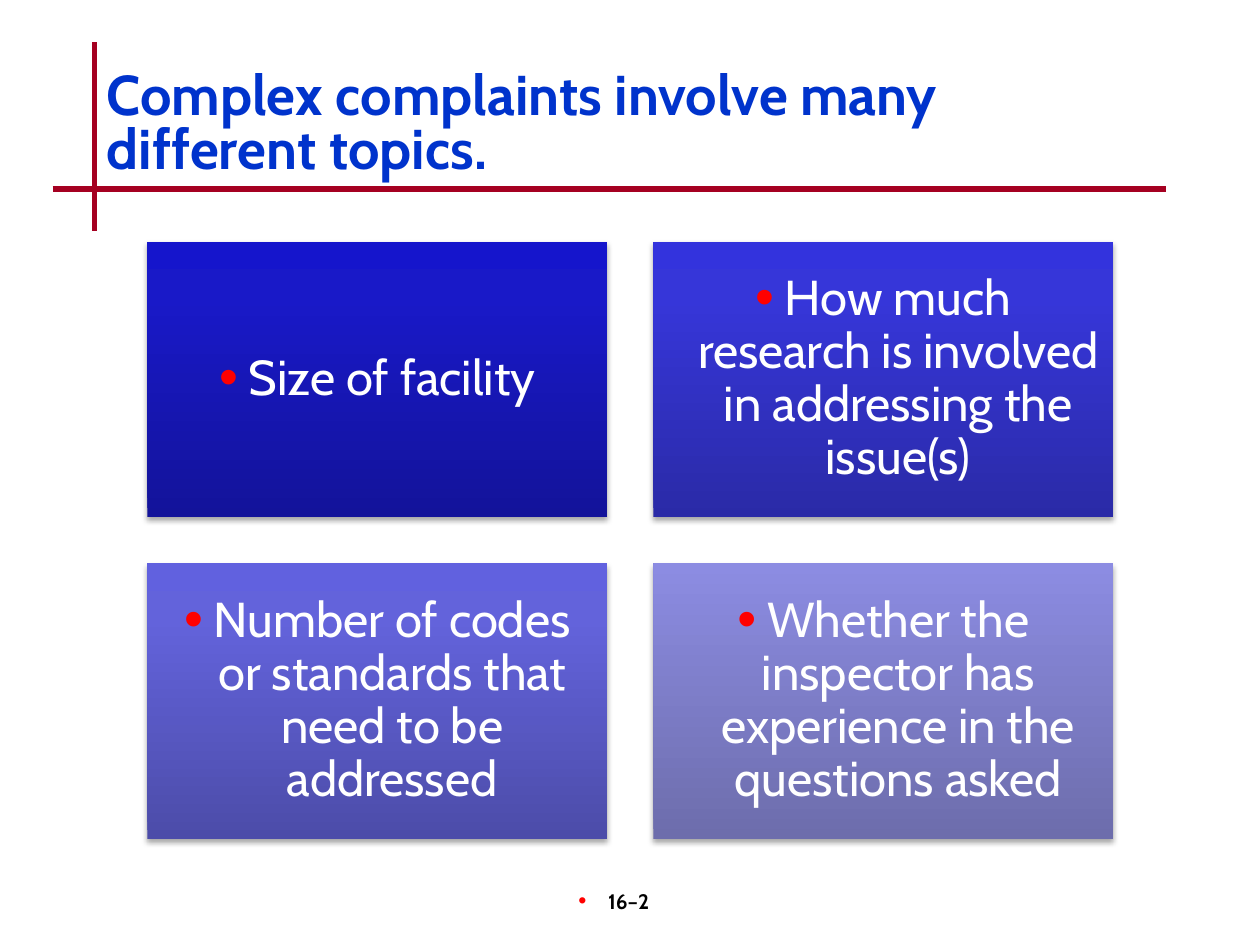
from dataclasses import dataclass

from lxml import etree
from pptx import Presentation
from pptx.dml.color import RGBColor
from pptx.enum.shapes import MSO_CONNECTOR, MSO_SHAPE
from pptx.enum.text import MSO_ANCHOR, MSO_AUTO_SIZE, PP_ALIGN
from pptx.oxml.ns import qn
from pptx.util import Cm, Pt

STRAIGHT = MSO_CONNECTOR.STRAIGHT
RECTANGLE = MSO_SHAPE.RECTANGLE
MIDDLE, TOP = MSO_ANCHOR.MIDDLE, MSO_ANCHOR.TOP
NO_AUTOFIT = MSO_AUTO_SIZE.NONE
LEFT, CENTER = PP_ALIGN.LEFT, PP_ALIGN.CENTER
TITLE_ONLY = 5


@dataclass(frozen=True)
class Theme:
    font: str = "Cabin"
    title: str = "0033CC"
    rule: str = "A50021"
    bullet: str = "FF0000"
    topic: str = "FFFFFF"
    number: str = "000000"
    shadow: str = "000000"
    title_size: int = 32
    topic_size: int = 28
    number_size: int = 12
    rule_width: int = 3


@dataclass(frozen=True)
class Topic:
    text: str
    stops: tuple[tuple[int, str], ...]


@dataclass(frozen=True)
class Rule:
    begin: tuple[float, float]
    end: tuple[float, float]


@dataclass(frozen=True)
class Grid:
    left: float = 2.97
    top: float = 4.87
    width: float = 9.27
    height: float = 5.56
    gap: float = 0.93
    columns: int = 2


THEME = Theme()
GRID = Grid()
TOPICS = (
    Topic("Size of facility",
          ((0, "13139A"), (80, "1919C8"), (100, "1515CC"))),
    Topic("How much research is involved in addressing the issue(s)",
          ((0, "2A2AA7"), (80, "3636D9"), (100, "3333DD"))),
    Topic("Number of codes or standards that need to be addressed",
          ((0, "4C4CA9"), (80, "6363DB"), (100, "6161DF"))),
    Topic("Whether the inspector has experience in the questions asked",
          ((0, "6D6DAC"), (100, "8C8CE2"))),
)
RULES = (
    Rule((1.9, 0.85), (1.9, 4.66)),
    Rule((1.06, 3.81), (23.5, 3.81)),
)


def set_values(target, values: dict) -> None:
    for name, value in values.items():
        setattr(target, name, value)


def add_element(parent, tag: str, **attributes):
    values = {name: str(value) for name, value in attributes.items()}
    return etree.SubElement(parent, qn(tag), values)


def add_bullet(para, indent: float) -> None:
    properties = para._p.get_or_add_pPr()
    properties.set("marL", str(Cm(indent)))
    properties.set("indent", str(-Cm(indent)))
    color = add_element(properties, "a:buClr")
    add_element(color, "a:srgbClr", val=THEME.bullet)
    add_element(properties, "a:buSzPct", val=110000)
    add_element(properties, "a:buFont", typeface="Arial")
    add_element(properties, "a:buChar", char="•")


def write_text(box, text: str, frame_values: dict, para_values: dict,
               font_values: dict, color: str, indent: float = 0) -> None:
    frame = box.text_frame
    set_values(frame, {"word_wrap": True, "auto_size": NO_AUTOFIT, **frame_values})
    para = frame.paragraphs[0]
    if indent:
        add_bullet(para, indent)
    set_values(para, para_values)
    span = para.add_run()
    span.text = text
    set_values(span.font, {"name": THEME.font, **font_values})
    span.font.color.rgb = RGBColor.from_string(color)


def fill_gradient(box, stops: tuple[tuple[int, str], ...]) -> None:
    box.fill.gradient()
    box.fill.gradient_angle = 90
    stop_list = box.element.spPr.find(qn("a:gradFill")).find(qn("a:gsLst"))
    for stop in list(stop_list):
        stop_list.remove(stop)
    for position, color in stops:
        stop = add_element(stop_list, "a:gs", pos=position * 1000)
        add_element(stop, "a:srgbClr", val=color)


def add_shadow(box) -> None:
    box.shadow.inherit = False
    effects = box.element.spPr.find(qn("a:effectLst"))
    shadow = add_element(effects, "a:outerShdw", blurRad=Pt(3.1), dist=Pt(1.8),
                         dir=5400000, rotWithShape=0)
    color = add_element(shadow, "a:srgbClr", val=THEME.shadow)
    add_element(color, "a:alpha", val=35000)


def add_rule(page, rule: Rule) -> None:
    line = page.shapes.add_connector(
        STRAIGHT, *(Cm(value) for value in rule.begin + rule.end))
    line.line.color.rgb = RGBColor.from_string(THEME.rule)
    line.line.width = Pt(THEME.rule_width)
    add_element(line.element.spPr, "a:effectLst")


def add_title(page, text: str) -> None:
    title = page.shapes.title
    set_values(title, {"left": Cm(1.9), "top": Cm(1.27),
                       "width": Cm(21.6), "height": Cm(2.54)})
    write_text(title, text, {"vertical_anchor": MIDDLE},
               {"alignment": LEFT, "line_spacing": 0.8},
               {"size": Pt(THEME.title_size), "bold": True}, THEME.title)


def add_topic(page, index: int, topic: Topic) -> None:
    row, column = divmod(index, GRID.columns)
    box = page.shapes.add_shape(
        RECTANGLE,
        Cm(GRID.left + column * (GRID.width + GRID.gap)),
        Cm(GRID.top + row * (GRID.height + GRID.gap)),
        Cm(GRID.width), Cm(GRID.height))
    fill_gradient(box, topic.stops)
    box.line.fill.background()
    add_shadow(box)
    margins = {f"margin_{side}": Cm(0.3)
               for side in ("left", "top", "right", "bottom")}
    write_text(box, topic.text, {"vertical_anchor": MIDDLE, **margins},
               {"alignment": CENTER, "line_spacing": 0.9},
               {"size": Pt(THEME.topic_size)}, THEME.topic, indent=0.6)


def add_page_number(page, text: str) -> None:
    box = page.shapes.add_textbox(Cm(9.96), Cm(17.78), Cm(5.28), Cm(1.27))
    write_text(box, text, {"vertical_anchor": TOP, "margin_right": Cm(0.7)},
               {"alignment": CENTER},
               {"size": Pt(THEME.number_size), "bold": True},
               THEME.number, indent=0.6)


def main() -> None:
    deck = Presentation()
    set_values(deck, {"slide_width": Cm(25.4), "slide_height": Cm(19.05)})
    page = deck.slides.add_slide(deck.slide_layouts[TITLE_ONLY])
    for rule in RULES:
        add_rule(page, rule)
    add_title(page, "Complex complaints involve many different topics.")
    for index, topic in enumerate(TOPICS):
        add_topic(page, index, topic)
    add_page_number(page, "16–2")
    deck.save("out.pptx")


if __name__ == "__main__":
    main()
